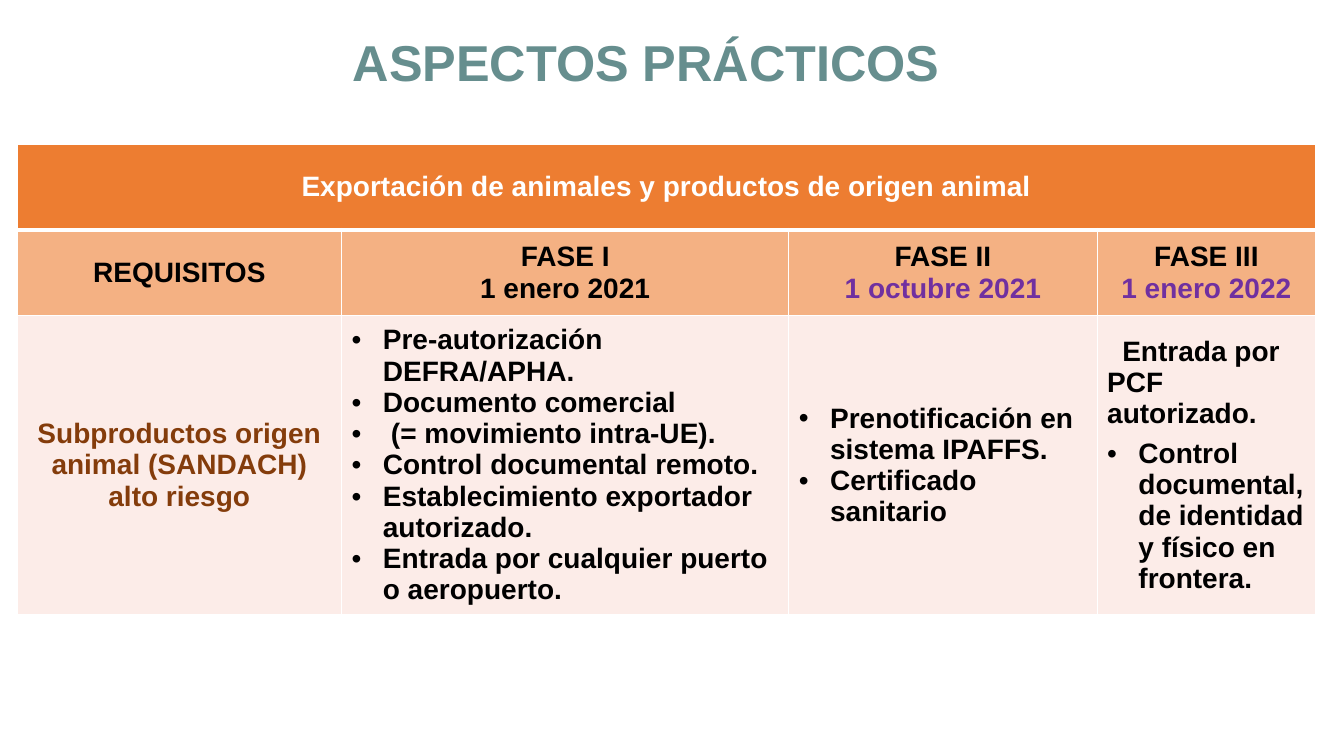
import pptx
import pptx.util
import pptx.dml.color
import pptx.enum.text
import pptx.oxml.ns
from lxml import etree

Inches = pptx.util.Inches
Pt = pptx.util.Pt
ALIGN = pptx.enum.text.PP_ALIGN
MIDDLE = pptx.enum.text.MSO_ANCHOR.MIDDLE
FONT = "Arial"
HUES = {
    "title": "668E8E", "white": "FFFFFF", "black": "000000",
    "date": "7030A0", "topic": "843C0B",
    "head": "ED7D31", "phase": "F4B183", "body": "FCECE8",
}
COLS = [3.22, 4.44, 3.06, 2.17]
ROWS = [0.85, 0.85, 2.97]
TOPIC = "Exportación de animales y productos de origen animal"
PHASES = [
    [("REQUISITOS", "black")],
    [("FASE I", "black"), ("1 enero 2021", "black")],
    [("FASE II", "black"), ("1 octubre 2021", "date")],
    [("FASE III", "black"), ("1 enero 2022", "date")],
]
GOODS = "Subproductos origen animal (SANDACH) alto riesgo"
HANG = (0.31, -0.31)
NUDGE = (0.39, -0.39)
FIRST = (0, 0.15)
STEPS = [
    [("Pre-autorización DEFRA/APHA.", HANG),
     ("Documento comercial", HANG),
     ("(= movimiento intra-UE).", NUDGE),
     ("Control documental remoto.", HANG),
     ("Establecimiento exportador autorizado.", HANG),
     ("Entrada por cualquier puerto o aeropuerto.", HANG)],
    [("Prenotificación en sistema IPAFFS.", HANG),
     ("Certificado sanitario", HANG)],
    [("Entrada por PCF autorizado.", FIRST),
     ("Control documental, de identidad y físico en frontera.", HANG)],
]


def color(name):
    return pptx.dml.color.RGBColor.from_string(HUES[name])


def style(para, size, hue, align):
    para.alignment = align
    for run in para.runs:
        run.font.name = FONT
        run.font.size = Pt(size)
        run.font.bold = True
        run.font.color.rgb = color(hue)


def indent(para, left, first):
    props = para._p.get_or_add_pPr()
    props.set("marL", str(Inches(left)))
    props.set("indent", str(Inches(first)))
    if first < 0:
        font = etree.SubElement(props, pptx.oxml.ns.qn("a:buFont"))
        font.set("typeface", FONT)
        mark = etree.SubElement(props, pptx.oxml.ns.qn("a:buChar"))
        mark.set("char", "•")


def border(cell, base):
    props = cell._tc.get_or_add_tcPr()
    sides = {"L": 1, "R": 1, "T": 1, "B": base}
    for spot, (side, width) in enumerate(sides.items()):
        line = etree.Element(pptx.oxml.ns.qn("a:ln" + side), w=str(Pt(width)))
        fill = etree.SubElement(line, pptx.oxml.ns.qn("a:solidFill"))
        etree.SubElement(fill, pptx.oxml.ns.qn("a:srgbClr"), val=HUES["white"])
        props.insert(spot, line)


def write(cell, lines):
    cell.text_frame.text = "\n".join(text for text, hue in lines)
    for para, (text, hue) in zip(cell.text_frame.paragraphs, lines):
        style(para, 20, hue, ALIGN.CENTER)


def bullets(cell, items):
    cell.text_frame.text = "\n".join(text for text, dent in items)
    for para, (text, dent) in zip(cell.text_frame.paragraphs, items):
        indent(para, *dent)
        style(para, 20, "black", ALIGN.LEFT)
        if dent == FIRST:
            para.space_after = Pt(6)


def heading(slide, left, top, width, height):
    title = slide.shapes.title
    title.left, title.top = Inches(left), Inches(top)
    title.width, title.height = Inches(width), Inches(height)
    frame = title.text_frame
    frame.text = "ASPECTOS PRÁCTICOS"
    frame.vertical_anchor = MIDDLE
    frame.paragraphs[0].line_spacing = 0.9
    style(frame.paragraphs[0], 36, "title", ALIGN.CENTER)


def grid(slide, left, top, width, height):
    table = slide.shapes.add_table(
        len(ROWS), len(COLS), Inches(left), Inches(top),
        Inches(width), Inches(height)).table
    for col, size in zip(table.columns, COLS):
        col.width = Inches(size * width / sum(COLS))
    for row, size, fill in zip(table.rows, ROWS, ("head", "phase", "body")):
        row.height = Inches(size * height / sum(ROWS))
        for cell in row.cells:
            cell.vertical_anchor = MIDDLE
            cell.fill.solid()
            cell.fill.fore_color.rgb = color(fill)
            border(cell, 3 if fill == "head" else 1)
    table.cell(0, 0).merge(table.cell(0, len(COLS) - 1))
    write(table.cell(0, 0), [(TOPIC, "white")])
    for col, lines in enumerate(PHASES):
        write(table.cell(1, col), lines)
    write(table.cell(2, 0), [(GOODS, "topic")])
    for col, items in enumerate(STEPS, 1):
        bullets(table.cell(2, col), items)


def main():
    deck = pptx.Presentation()
    deck.slide_width = Inches(13.33)
    deck.slide_height = Inches(7.5)
    slide = deck.slides.add_slide(deck.slide_layouts[5])
    grid(slide, 0.17, 1.43, 12.88, 4.67)
    heading(slide, 0.66, 0.14, 11.5, 1.01)
    deck.save("out.pptx")


if __name__ == "__main__":
    main()
